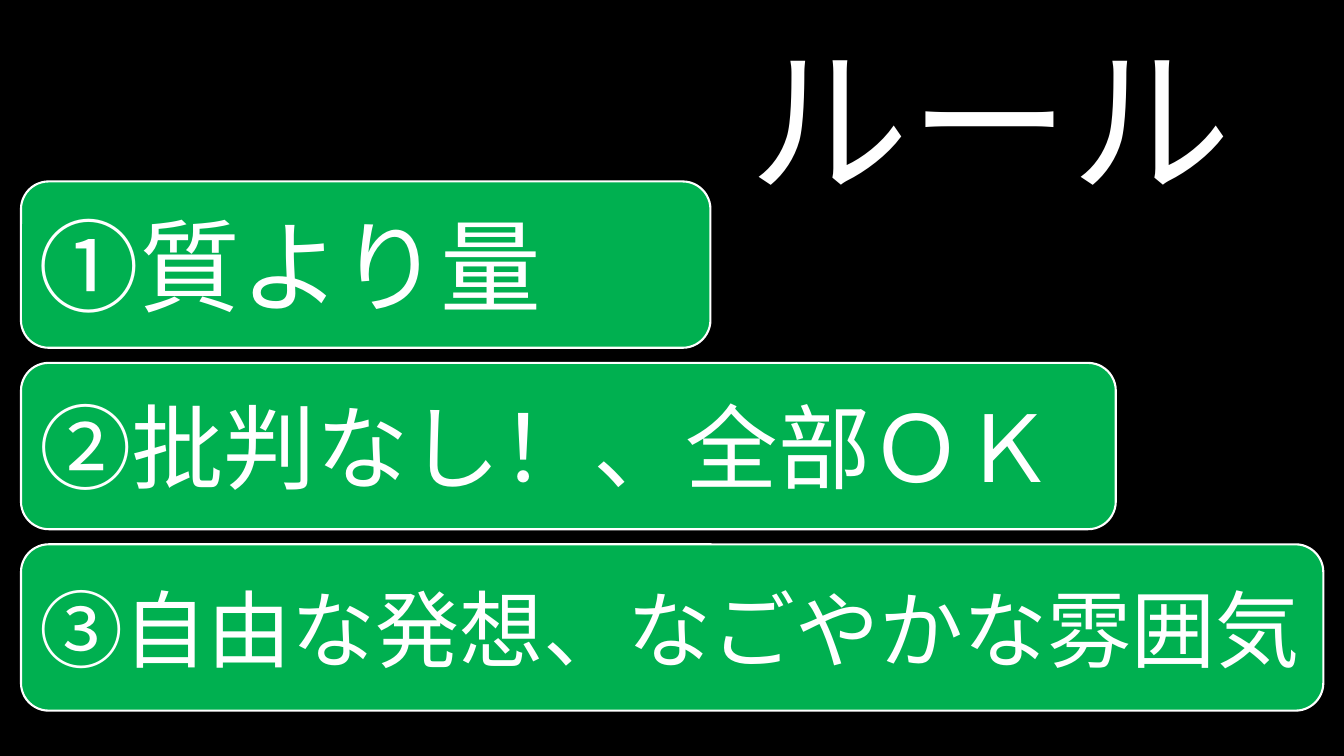
from pptx import Presentation
from pptx.dml.color import RGBColor
from pptx.enum.shapes import MSO_SHAPE
from pptx.enum.text import MSO_ANCHOR, PP_ALIGN
from pptx.util import Pt

BLACK = RGBColor(0x00, 0x00, 0x00)
WHITE = RGBColor(0xFF, 0xFF, 0xFF)
GREEN = RGBColor(0x00, 0xB0, 0x50)

RULES = [
    ("①質より量", 492.5, 72),
    ("②批判なし！、全部ＯＫ", 782, 66),
    ("③自由な発想、なごやかな雰囲気", 930.25, 60),
]
RULE_LEFT, RULE_TOP, RULE_HEIGHT, RULE_PITCH = 15, 129.6, 118.8, 129.6


def write_text(shape, text, size, align):
    frame = shape.text_frame
    frame.word_wrap = True
    frame.vertical_anchor = MSO_ANCHOR.MIDDLE
    para = frame.paragraphs[0]
    para.text = text
    para.alignment = align
    font_format = {"name": "Calibri", "size": Pt(size), "bold": False}
    for name, value in font_format.items():
        setattr(para.font, name, value)
    para.font.color.rgb = WHITE
    return para


deck = Presentation()
deck.slide_width, deck.slide_height = Pt(960), Pt(540)
page = deck.slides.add_slide(deck.slide_layouts[5])
page.background.fill.solid()
page.background.fill.fore_color.rgb = BLACK

title = page.shapes.title
title_place = {"left": 502, "top": 19.5, "width": 385, "height": 146}
for name, value in title_place.items():
    setattr(title, name, Pt(value))
title_para = write_text(title, "ルール", 115, PP_ALIGN.RIGHT)
title_para.line_spacing = 0.9

for index, (rule, width, size) in enumerate(RULES):
    box = page.shapes.add_shape(
        MSO_SHAPE.ROUNDED_RECTANGLE,
        Pt(RULE_LEFT), Pt(RULE_TOP + index * RULE_PITCH),
        Pt(width), Pt(RULE_HEIGHT),
    )
    box.shadow.inherit = False
    box.fill.solid()
    box.fill.fore_color.rgb = GREEN
    box.line.color.rgb = WHITE
    box.line.width = Pt(1.5)
    write_text(box, rule, size, PP_ALIGN.LEFT)

deck.save("out.pptx")
